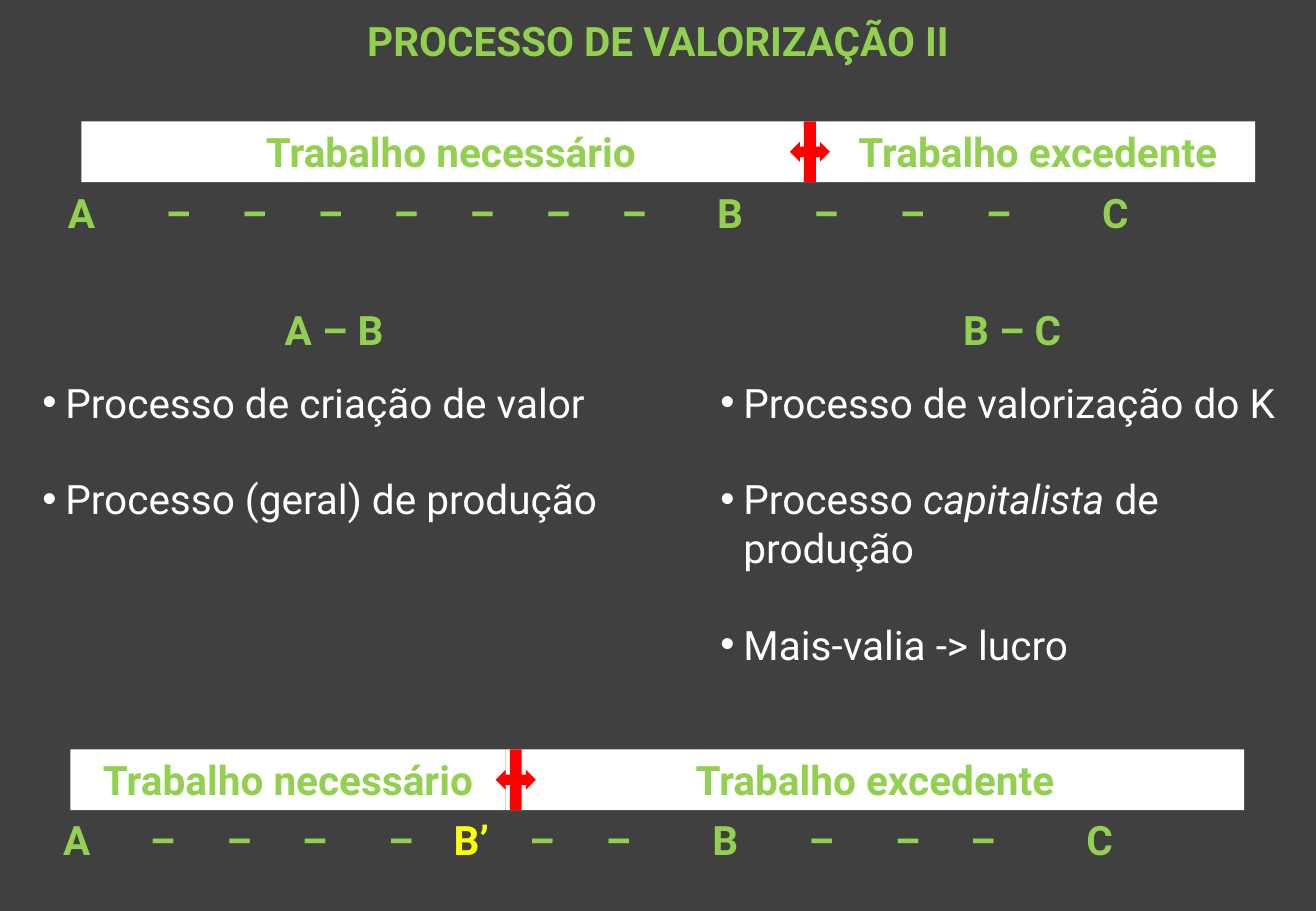
from lxml import etree
from pptx import Presentation
from pptx.dml.color import RGBColor
from pptx.enum import shapes, text
from pptx.oxml import ns
from pptx.util import Inches, Pt

COLORS = {"background": "404040", "green": "92D050", "white": "FFFFFF",
          "red": "FF0000", "yellow": "FFFF00"}
FONT = "Roboto"
CENTER = text.PP_ALIGN.CENTER
LEFT = text.PP_ALIGN.LEFT


def write(frame, paragraphs, color="green", bold=True, align=CENTER,
          bullet=False, tabs=()):
    """Each paragraph is a list of (text, overrides); tabs are centred stops in inches."""
    frame.word_wrap = True
    frame.vertical_anchor = text.MSO_ANCHOR.TOP
    for index, spans in enumerate(paragraphs):
        para = frame.paragraphs[0] if index == 0 else frame.add_paragraph()
        para.alignment = align
        props = para._p.get_or_add_pPr()
        if bullet:
            para.space_after = Pt(28.5)
            props.set("marL", str(Inches(0.19)))
            props.set("indent", str(-Inches(0.19)))
            etree.SubElement(props, ns.qn("a:buFont"), typeface="Arial")
            etree.SubElement(props, ns.qn("a:buChar"), char="•")
        if tabs:
            stops = etree.SubElement(props, ns.qn("a:tabLst"))
            for stop in tabs:
                etree.SubElement(stops, ns.qn("a:tab"), pos=str(Inches(stop)), algn="ctr")
        for words, override in spans:
            span = para.add_run()
            span.text = words
            span.font.name = FONT
            span.font.size = Pt(24)
            span.font.bold = bold
            span.font.italic = override.get("italic", False)
            span.font.color.rgb = RGBColor.from_string(COLORS[override.get("color", color)])


def add_block(parent, kind, left, top, width, fill):
    block = parent.add_shape(kind, Inches(left), Inches(top), Inches(width), Inches(0.5))
    block.shadow.inherit = False
    block.fill.solid()
    block.fill.fore_color.rgb = RGBColor.from_string(COLORS[fill])
    block.line.fill.background()
    return block


deck = Presentation()
deck.slide_width, deck.slide_height = Inches(10.83), Inches(7.5)
page = deck.slides.add_slide(deck.slide_layouts[5])
page.background.fill.solid()
page.background.fill.fore_color.rgb = RGBColor.from_string(COLORS["background"])

title = page.shapes.title
title.left, title.top = Inches(0), Inches(0.08)
title.width, title.height = Inches(10.83), Inches(0.5)
write(title.text_frame, [[("PROCESSO DE VALORIZAÇÃO II", {})]])

# Working day: necessary and surplus labour, with the points A, B and C below
days = [
    {"left": 0.67, "top": 1, "necessary": 6.08, "surplus": 3.58, "divider": 6.5,
     "scale_left": 0.46, "scale_top": 1.5,
     "marks": "A – – – – – – – B – – – C",
     "tabs": [0.91 + 0.625 * step for step in range(7)] + [5.45, 6.24, 6.95, 7.66, 8.62]},
    {"left": 0.58, "top": 6.17, "necessary": 3.58, "surplus": 6.08, "divider": 4.08,
     "scale_left": 0.42, "scale_top": 6.66,
     "marks": "A – – – – B’ – – B – – – C",
     "tabs": [0.82, 1.45, 2.07, 2.78, 3.36, 3.94, 4.57, 5.45, 6.24, 6.95, 7.57, 8.53]},
]
for day in days:
    group = page.shapes.add_group_shape().shapes
    left = day["left"]
    for label, part in (("Trabalho necessário", "necessary"), ("Trabalho excedente", "surplus")):
        bar = add_block(group, shapes.MSO_SHAPE.RECTANGLE, left, day["top"], day[part], "white")
        write(bar.text_frame, [[(label, {})]])
        left += day[part]

    scale = group.add_textbox(Inches(day["scale_left"]), Inches(day["scale_top"]),
                              Inches(10.08), Inches(0.5))
    spans = []
    for index, mark in enumerate(day["marks"].split()):
        prefix = "\t" if index else ""
        spans.append((prefix + mark, {"color": "yellow"} if mark == "B’" else {}))
    write(scale.text_frame, [spans], align=LEFT, tabs=day["tabs"])

    divider = add_block(group, shapes.MSO_SHAPE.LEFT_RIGHT_ARROW_CALLOUT,
                        day["divider"], day["top"], 0.33, "red")
    for index, value in enumerate((0.259, 0.25, 0.25, 0.298)):
        divider.adjustments[index] = value

# Two columns explaining each section of the day
columns = [
    (0.25, "A – B", [[("Processo de criação de valor", {})],
                     [("Processo (geral) de produção", {})]]),
    (5.83, "B – C", [[("Processo de valorização do K", {})],
                     [("Processo ", {}), ("capitalista", {"italic": True}), (" de produção", {})],
                     [("Mais-valia -> lucro", {})]]),
]
for left, heading, points in columns:
    box = page.shapes.add_textbox(Inches(left), Inches(2.46), Inches(5), Inches(0.5))
    write(box.text_frame, [[(heading, {})]])
    box = page.shapes.add_textbox(Inches(left), Inches(3.06), Inches(5), Inches(2.52))
    write(box.text_frame, points, color="white", bold=False, align=LEFT, bullet=True)

deck.save("out.pptx")
